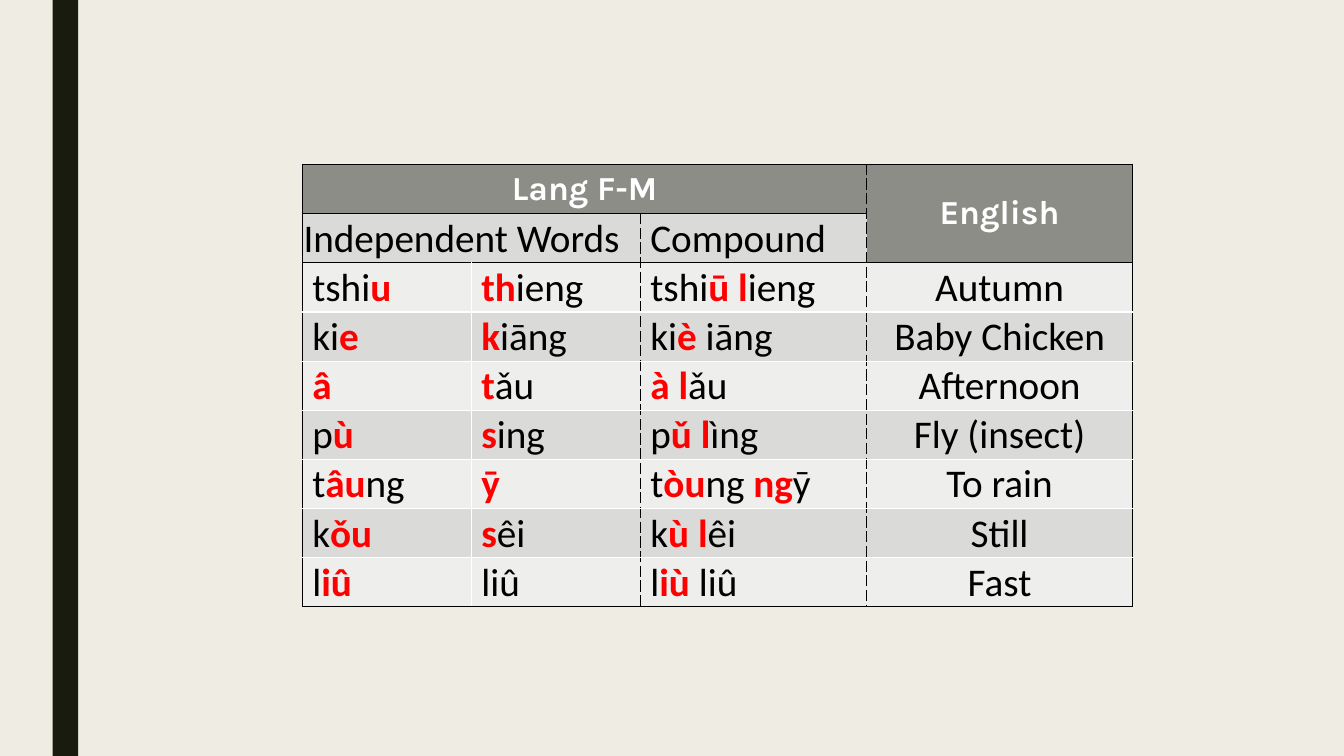
from lxml.etree import SubElement
from pptx import Presentation
from pptx.dml.color import RGBColor
from pptx.enum.shapes import MSO_SHAPE
from pptx.enum.text import MSO_ANCHOR, PP_ALIGN
from pptx.oxml.ns import qn
from pptx.util import Cm, Pt

BACKGROUND = RGBColor(0xEF, 0xED, 0xE3)
BAR = RGBColor(0x19, 0x1B, 0x0E)
HEADER = RGBColor(0x8C, 0x8D, 0x86)
DARK_BAND = RGBColor(0xDA, 0xDB, 0xD9)
LIGHT_BAND = RGBColor(0xEE, 0xEE, 0xED)
BLACK = RGBColor(0, 0, 0)
WHITE = RGBColor(0xFF, 0xFF, 0xFF)
RED = RGBColor(0xFF, 0, 0)

HEADER_FONT = {"name": "Karla", "size": Pt(24), "bold": True}
WORD_FONT = {"name": "Calibri", "size": Pt(28), "bold": False}
CHANGED_FONT = {**WORD_FONT, "bold": True}
WORD_MARGINS = {"margin_left": Cm(0.25), "margin_right": Cm(0.03),
                "margin_top": Cm(0.03), "margin_bottom": 0}
FLUSH_MARGINS = {**WORD_MARGINS, "margin_left": Cm(0.03)}

# Asterisks enclose the sounds that change in the compound
WORDS = [
    ("Lang F-M", "", "", "English"),
    ("Independent Words", "", "Compound", ""),
    ("tshi*u*", "*th*ieng", "tshi*ū l*ieng", "Autumn"),
    ("ki*e*", "*k*iāng", "ki*è *iāng", "Baby Chicken"),
    ("*â*", "*t*ǎu", "*à l*ǎu", "Afternoon"),
    ("p*ù*", "*s*ing", "p*ǔ l*ìng", "Fly (insect)"),
    ("t*âu*ng", "*ȳ*", "t*òu*ng *ng*ȳ", "To rain"),
    ("k*ǒu*", "*s*êi", "k*ù l*êi", "Still"),
    ("l*iû*", "liû", "l*iù *liû", "Fast"),
]
COLUMN_WIDTHS = [Cm(4.26), Cm(4.26), Cm(5.7), Cm(6.7)]
ROW_HEIGHT = Cm(1.22)
ENGLISH = 3

# Grid lines, numbered from the left and from the top
COLUMN_LINES = [(BLACK, "solid"), (WHITE, "solid"), (BLACK, "dash"),
                (BLACK, "dash"), (BLACK, "solid")]
ROW_LINES = [(BLACK if i in (0, 1, 2, len(WORDS)) else WHITE, "solid")
             for i in range(len(WORDS) + 1)]


def apply_format(target, values):
    for name, value in values.items():
        setattr(target, name, value)


def add_side_bar(slide, height):
    bar = slide.shapes.add_shape(MSO_SHAPE.RECTANGLE, Cm(1.33), 0, Cm(0.64), height)
    bar.shadow.inherit = False
    bar.fill.solid()
    bar.fill.fore_color.rgb = BAR
    bar.line.fill.background()


def draw_borders(cell, row, column):
    sides = {
        "a:lnL": COLUMN_LINES[column],
        "a:lnR": COLUMN_LINES[column + cell.span_width],
        "a:lnT": ROW_LINES[row],
        "a:lnB": ROW_LINES[row + cell.span_height],
    }
    properties = cell._tc.get_or_add_tcPr()
    for side, (color, dash) in sides.items():
        line = SubElement(properties, qn(side), w=str(Pt(1)))
        fill = SubElement(line, qn("a:solidFill"))
        SubElement(fill, qn("a:srgbClr"), val=str(color))
        SubElement(line, qn("a:prstDash"), val=dash)


def write_word(cell, word, font, color, alignment):
    paragraph = cell.text_frame.paragraphs[0]
    paragraph.alignment = alignment
    for position, part in enumerate(word.split("*")):
        if not part:
            continue
        changed = position % 2 == 1
        run = paragraph.add_run()
        run.text = part
        apply_format(run.font, CHANGED_FONT if changed else font)
        run.font.color.rgb = RED if changed else color


def format_cell(cell, row, column):
    is_header = row == 0
    centred = is_header or column == ENGLISH
    draw_borders(cell, row, column)
    cell.fill.solid()
    cell.fill.fore_color.rgb = (
        HEADER if is_header else DARK_BAND if row % 2 else LIGHT_BAND)
    cell.vertical_anchor = MSO_ANCHOR.MIDDLE
    if not is_header:
        flush = centred or cell.is_merge_origin
        apply_format(cell, FLUSH_MARGINS if flush else WORD_MARGINS)
    write_word(cell, WORDS[row][column],
               HEADER_FONT if is_header else WORD_FONT,
               WHITE if is_header else BLACK,
               PP_ALIGN.CENTER if centred else PP_ALIGN.LEFT)


def add_word_table(slide):
    table = slide.shapes.add_table(
        len(WORDS), len(COLUMN_WIDTHS), Cm(7.62), Cm(4.14),
        sum(COLUMN_WIDTHS), ROW_HEIGHT * len(WORDS)).table
    for column, width in zip(table.columns, COLUMN_WIDTHS):
        column.width = width

    # Headings that span several cells
    table.cell(0, 0).merge(table.cell(0, 2))
    table.cell(0, ENGLISH).merge(table.cell(1, ENGLISH))
    table.cell(1, 0).merge(table.cell(1, 1))

    for row in range(len(WORDS)):
        for column in range(len(COLUMN_WIDTHS)):
            cell = table.cell(row, column)
            if not cell.is_spanned:
                format_cell(cell, row, column)


def main():
    deck = Presentation()
    deck.slide_width, deck.slide_height = Cm(33.87), Cm(19.05)
    slide = deck.slides.add_slide(deck.slide_layouts[6])
    slide.background.fill.solid()
    slide.background.fill.fore_color.rgb = BACKGROUND
    add_side_bar(slide, deck.slide_height)
    add_word_table(slide)
    deck.save("out.pptx")


if __name__ == "__main__":
    main()
